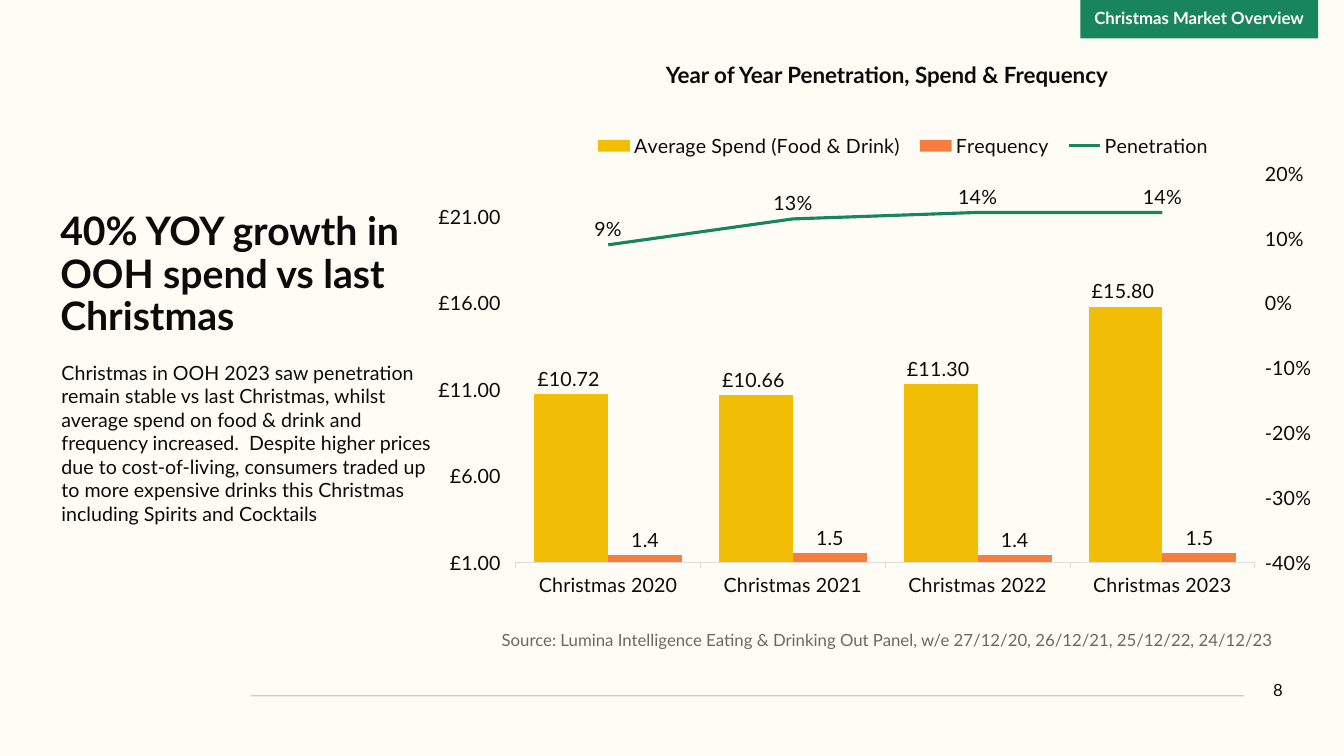
from copy import deepcopy

from pptx import Presentation
from pptx.chart.axis import ValueAxis
from pptx.chart.data import CategoryChartData
from pptx.dml.color import RGBColor
from pptx.enum.chart import XL_CHART_TYPE, XL_LABEL_POSITION, XL_LEGEND_POSITION, XL_MARKER_STYLE, XL_TICK_MARK
from pptx.enum.shapes import MSO_CONNECTOR, MSO_SHAPE
from pptx.enum.text import MSO_ANCHOR, PP_ALIGN
from pptx.oxml import parse_xml
from pptx.oxml.ns import nsdecls, qn
from pptx.util import Cm, Pt

COLORS = {
    "paper": "FFFCF6", "ink": "0B0B0A", "green": "18855F", "yellow": "F1BE05",
    "orange": "F57D3D", "grey": "696963", "axis": "DCDCD9",
}
FONT = "Lato"
POUNDS = '"£"#,##0.00_);[Red]\\("£"#,##0.00\\)'


def rgb(name):
    return RGBColor.from_string(COLORS[name])


def set_font(font, size, color="ink", bold=False):
    font.name, font.size, font.bold = FONT, Pt(size), bold
    font.color.rgb = rgb(color)


def write(sp, text, size, color="ink", bold=False, align=PP_ALIGN.LEFT,
          anchor=MSO_ANCHOR.TOP, insets=(0, 0, 0, 0), wrap=True, spacing=1.0):
    tf = sp.text_frame
    tf.word_wrap = wrap
    tf.vertical_anchor = anchor
    tf.margin_left, tf.margin_top, tf.margin_right, tf.margin_bottom = map(Cm, insets)
    p = tf.paragraphs[0]
    p.alignment, p.line_spacing = align, spacing
    r = p.add_run()
    r.text = text
    set_font(r.font, size, color, bold)


def add_text(s, box, text, size, **style):
    write(s.shapes.add_textbox(*map(Cm, box)), text, size, **style)


def add_block(s, box, fill, text, size, **style):
    sp = s.shapes.add_shape(MSO_SHAPE.RECTANGLE, *map(Cm, box))
    sp.shadow.inherit = False
    sp.fill.solid()
    sp.fill.fore_color.rgb = rgb(fill)
    sp.line.fill.background()
    write(sp, text, size, anchor=MSO_ANCHOR.MIDDLE, **style)


def add_rule(s, x1, x2, y):
    rule = s.shapes.add_connector(MSO_CONNECTOR.STRAIGHT, Cm(x1), Cm(y), Cm(x2), Cm(y))
    rule.line.width = Pt(1)
    rule.line.color.rgb = rgb("ink")
    sp_pr = rule._element.spPr
    for color in sp_pr.iter(qn("a:srgbClr")):
        color.append(parse_xml(f'<a:alpha {nsdecls("a")} val="20000"/>'))
    sp_pr.append(parse_xml(f'<a:effectLst {nsdecls("a")}/>'))


def remove_children(element, tag):
    for child in element.findall(qn(tag)):
        element.remove(child)


def manual_layout(x, y, w, h, inner=False):
    target = '<c:layoutTarget val="inner"/>' if inner else ""
    modes = '<c:xMode val="edge"/><c:yMode val="edge"/>'
    sizes = "".join(f'<c:{k} val="{v}"/>' for k, v in zip("xywh", (x, y, w, h)))
    return parse_xml(f'<c:layout {nsdecls("c")}><c:manualLayout>{target}{modes}{sizes}'
                     '</c:manualLayout></c:layout>')


def scale_axis(axis, low, high, step, number_format):
    axis.minimum_scale, axis.maximum_scale, axis.major_unit = low, high, step
    axis.tick_labels.number_format = number_format
    axis.tick_labels.number_format_is_linked = False


def label_series(ser, position, number_format):
    labels = ser.data_labels
    labels.show_value = True
    labels.position = position
    labels.number_format, labels.number_format_is_linked = number_format, False
    set_font(labels.font, 14)


def move_to_right_axis(chart, ser):
    """Turn a column series into a line on a second value axis."""
    cat_ax, val_ax = chart.category_axis._element, chart.value_axis._element
    ids = {ax.find(qn("c:axId")).get("val"): new
           for ax, new in ((cat_ax, "5001"), (val_ax, "5002"))}
    line = parse_xml(
        f'<c:lineChart {nsdecls("c")}><c:grouping val="standard"/><c:varyColors val="0"/>'
        '<c:marker val="1"/><c:axId val="5001"/><c:axId val="5002"/></c:lineChart>')
    chart.plots[0]._element.addnext(line)
    remove_children(ser._element, "c:invertIfNegative")
    line.insert(2, ser._element)

    right_ax, hidden_ax = deepcopy(val_ax), deepcopy(cat_ax)
    val_ax.addnext(right_ax)
    right_ax.addnext(hidden_ax)
    for ax in (right_ax, hidden_ax):
        for tag in ("c:axId", "c:crossAx"):
            node = ax.find(qn(tag))
            node.set("val", ids[node.get("val")])
    hidden_ax.find(qn("c:delete")).set("val", "1")
    right_ax.find(qn("c:axPos")).set("val", "r")
    right_ax.find(qn("c:crosses")).set("val", "max")
    return ValueAxis(right_ax)


def add_spend_chart(s, box):
    data = CategoryChartData()
    data.categories = [f"Christmas {year}" for year in range(2020, 2024)]
    data.add_series("Average Spend (Food & Drink)", (10.72, 10.66, 11.3, 15.8))
    data.add_series("Frequency", (1.4, 1.5, 1.4, 1.5))
    data.add_series("Penetration", (0.09, 0.13, 0.14, 0.14), "0%")
    chart = s.shapes.add_chart(XL_CHART_TYPE.COLUMN_CLUSTERED, *map(Cm, box), data).chart
    chart.has_title = False
    set_font(chart.font, 14)

    # Axes
    for axis in (chart.category_axis, chart.value_axis):
        axis.visible = True
        axis.has_major_gridlines = False
        axis.major_tick_mark = XL_TICK_MARK.OUTSIDE
        set_font(axis.tick_labels.font, 14)
    cat_line = chart.category_axis.format.line
    cat_line.width = Pt(0.75)
    cat_line.color.rgb = rgb("axis")
    chart.value_axis.format.line.fill.background()
    scale_axis(chart.value_axis, 1, 25, 5, POUNDS)
    right_axis = move_to_right_axis(chart, chart.plots[0].series[2])
    scale_axis(right_axis, -0.4, 0.24, 0.1, "0%")

    # Columns
    columns, lines = chart.plots
    columns.gap_width, columns.overlap = 50, 0
    columns.vary_by_categories = False
    for ser, color, fmt in zip(columns.series, ("yellow", "orange"), (POUNDS, "0.0")):
        ser.format.fill.solid()
        ser.format.fill.fore_color.rgb = rgb(color)
        label_series(ser, XL_LABEL_POSITION.OUTSIDE_END, fmt)

    # Penetration line
    penetration = lines.series[0]
    penetration.smooth = False
    penetration.marker.style = XL_MARKER_STYLE.NONE
    penetration.format.line.width = Pt(2.25)
    penetration.format.line.color.rgb = rgb("green")
    label_series(penetration, XL_LABEL_POSITION.ABOVE, "0%")

    # Legend and plot placement
    chart.has_legend = True
    legend = chart.legend
    legend.position = XL_LEGEND_POSITION.TOP
    legend.include_in_layout = False
    set_font(legend.font, 14)
    remove_children(legend._element, "c:layout")
    # The default position is left unwritten, so the layout goes before overlay
    legend._element.find(qn("c:overlay")).addprevious(manual_layout(0.17, 0.04, 0.72, 0.08))
    plot_area = columns._element.getparent()
    remove_children(plot_area, "c:layout")
    plot_area.insert(0, manual_layout(0.092, 0.084, 0.836, 0.811, inner=True))


def main():
    prs = Presentation()
    prs.slide_width, prs.slide_height = Cm(33.87), Cm(19.05)
    s = prs.slides.add_slide(prs.slide_layouts[6])
    s.background.fill.solid()
    s.background.fill.fore_color.rgb = rgb("paper")
    # Footer
    add_rule(s, 6.32, 32.33, 17.53)
    add_block(s, (31.34, 17.12, 0.99, 0.51), "paper", "8", 12,
              align=PP_ALIGN.RIGHT, insets=(0.41, 0, 0, 0))
    # Message
    add_text(s, (1.55, 9.09, 9.4, 4.19),
             "Christmas in OOH 2023 saw penetration remain stable vs last Christmas, whilst "
             "average spend on food & drink and frequency increased.  Despite higher prices "
             "due to cost-of-living, consumers traded up to more expensive drinks this "
             "Christmas including Spirits and Cocktails", 14)
    add_text(s, (1.52, 5.33, 9.4, 3.73), "40% YOY growth in OOH spend vs last Christmas", 28,
             bold=True, anchor=MSO_ANCHOR.MIDDLE, insets=(0, 0, 0, 0.51), spacing=0.9)
    # Chart with heading and source
    add_spend_chart(s, (10.95, 2.64, 22.28, 12.88))
    add_block(s, (27.23, 0, 5.99, 0.97), "green", "Christmas Market Overview", 12,
              color="paper", bold=True, align=PP_ALIGN.CENTER,
              insets=(0.41, 0.2, 0.41, 0.25), wrap=False)
    add_text(s, (12.37, 15.52, 19.99, 0.86),
             "Source: Lumina Intelligence Eating & Drinking Out Panel, "
             "w/e 27/12/20, 26/12/21, 25/12/22, 24/12/23", 12,
             color="grey", align=PP_ALIGN.CENTER, insets=(0, 0.41, 0, 0), spacing=0.9)
    add_text(s, (16.74, 1.55, 11.23, 1.09), "Year of Year Penetration, Spend & Frequency", 16,
             bold=True, align=PP_ALIGN.CENTER, insets=(0, 0, 0, 0.41), wrap=False)
    prs.save("out.pptx")


if __name__ == "__main__":
    main()
